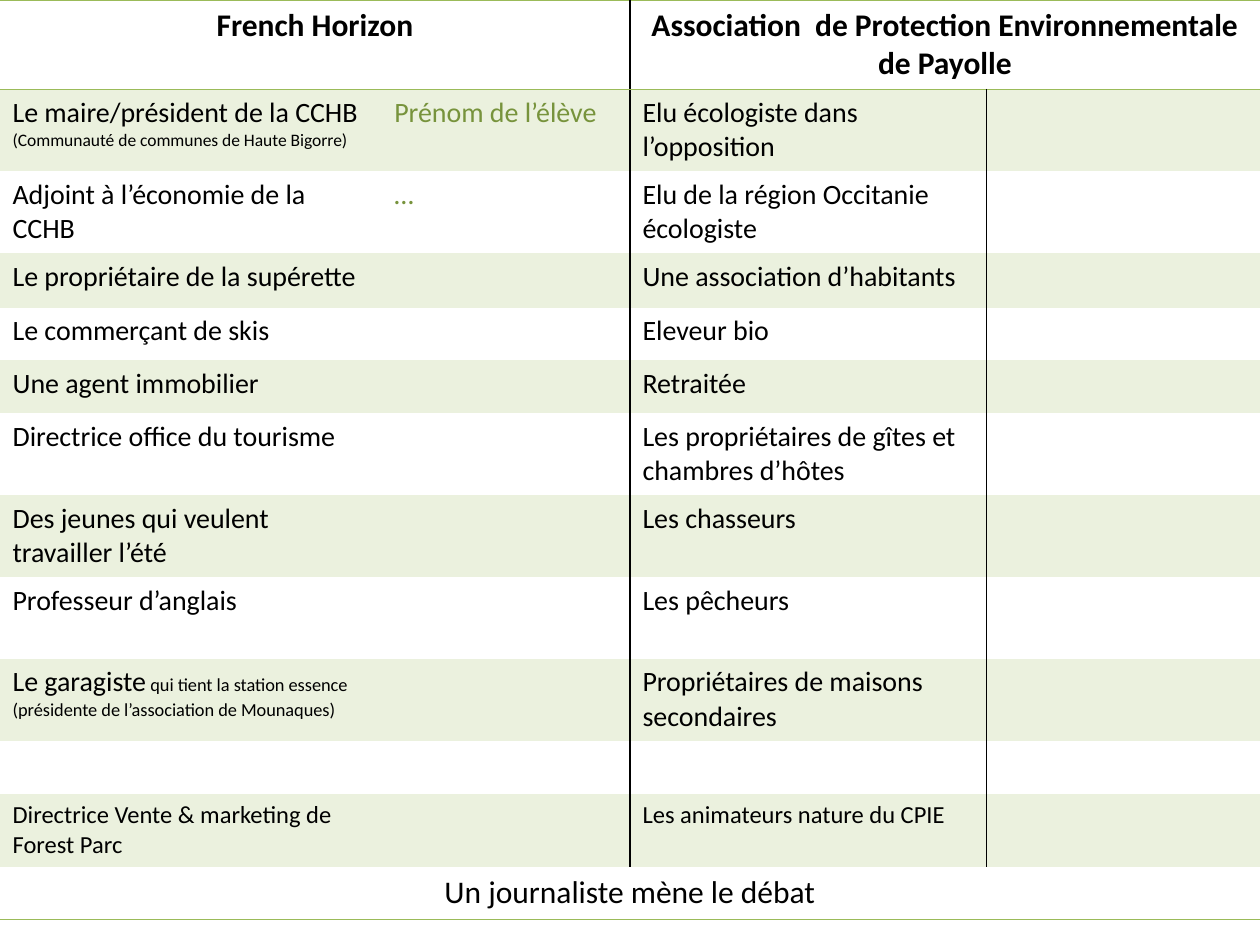
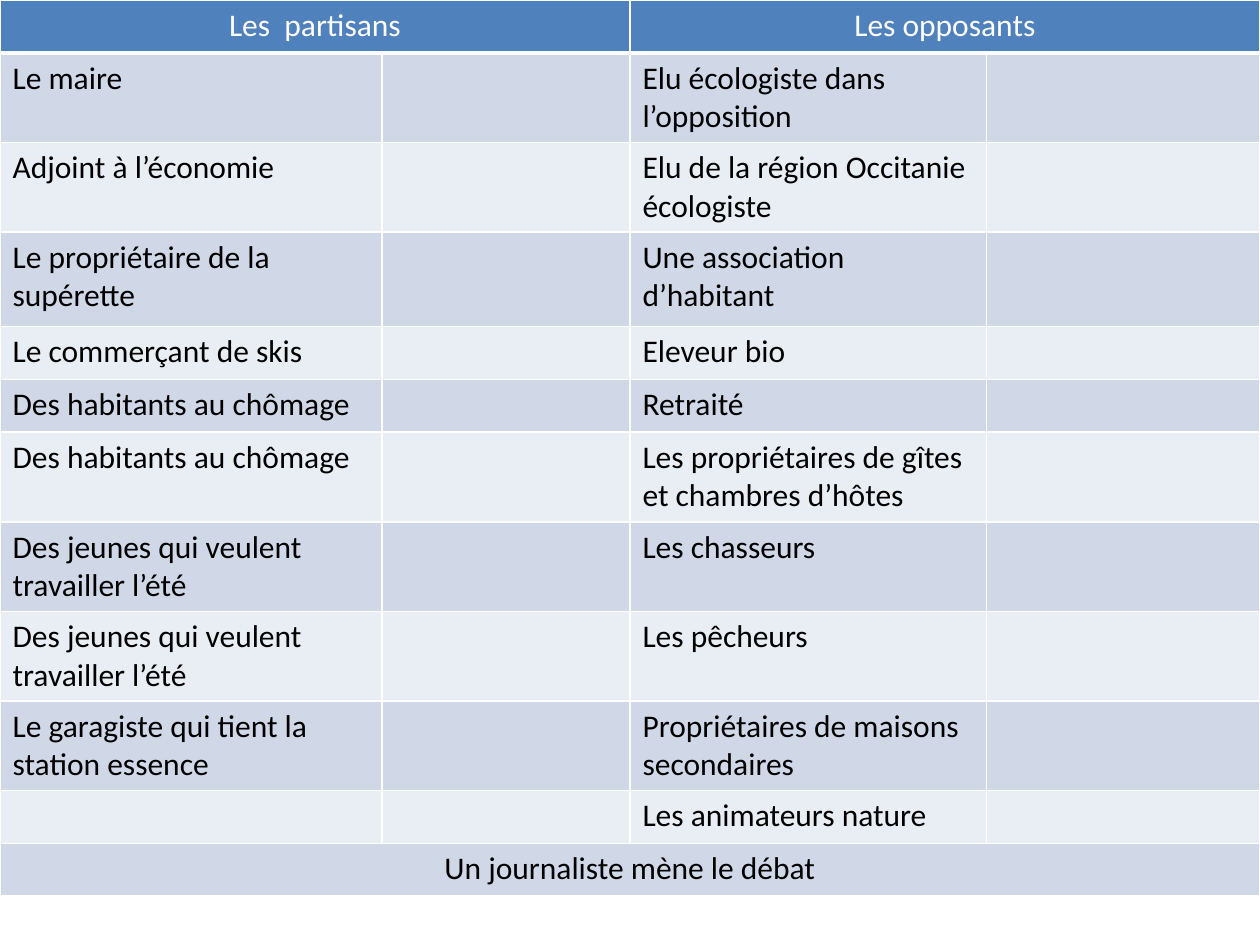
from dataclasses import dataclass
from lxml import etree
from pptx import Presentation
from pptx.dml.color import RGBColor
from pptx.enum import text
from pptx.oxml import ns
from pptx.util import Inches, Pt

GREEN, BLACK, WHITE = "9BBB59", "000000", "FFFFFF"
COLS = (3.03, 1.97, 2.83, 2.17)
LOW, HIGH = 0.42, 0.65
CLOSING = "Un journaliste mène le débat"


@dataclass
class Theme:
    head: str
    ink: str
    bands: tuple
    last: str
    body: int
    bold: bool
    font: str = "Calibri"
    title: int = 18
    name: str = "77933C"


OLIVE = Theme(WHITE, BLACK, ("EBF1DE", WHITE), WHITE, 16, True)
BLUE = Theme("4F81BD", WHITE, ("D0D8E8", "E9EDF4"), "D0D8E8", 18, False)

# Each row: height, supporter, pupil, opponent[, type size]
# A list holds (text, size) runs.
CAST = [
    (HIGH, [("Le maire/président de la CCHB ", 16),
            ("(Communauté de communes de Haute Bigorre)", 10)],
     "Prénom de l’élève", "Elu écologiste dans l’opposition"),
    (HIGH, "Adjoint à l’économie de la CCHB", "…", "Elu de la région Occitanie écologiste"),
    (0.43, "Le propriétaire de la supérette", "", "Une association d’habitants"),
    (LOW, "Le commerçant de skis", "", "Eleveur bio"),
    (LOW, "Une agent immobilier", "", "Retraitée"),
    (HIGH, "Directrice office du tourisme", "", "Les propriétaires de gîtes et chambres d’hôtes"),
    (HIGH, "Des jeunes qui veulent travailler l’été", "", "Les chasseurs"),
    (HIGH, "Professeur d’anglais", "", "Les pêcheurs"),
    (HIGH, [("Le garagiste", 16),
            (" qui tient la station essence (présidente de l’association de Mounaques)", 10.5)],
     "", "Propriétaires de maisons secondaires"),
    (LOW, "", "", ""),
    (0.58, "Directrice Vente & marketing de Forest Parc", "", "Les animateurs nature du CPIE", 14),
]
SIDES = [
    (HIGH, "Le maire", "", "Elu écologiste dans l’opposition"),
    (HIGH, "Adjoint à l’économie", "", "Elu de la région Occitanie écologiste"),
    (0.75, "Le propriétaire de la supérette", "", "Une association d’habitant"),
    (LOW, "Le commerçant de skis", "", "Eleveur bio"),
    (LOW, "Des habitants au chômage", "", "Retraité"),
    (HIGH, "Des habitants au chômage", "", "Les propriétaires de gîtes et chambres d’hôtes"),
    (HIGH, "Des jeunes qui veulent travailler l’été", "", "Les chasseurs"),
    (HIGH, "Des jeunes qui veulent travailler l’été", "", "Les pêcheurs"),
    (HIGH, "Le garagiste qui tient la station essence", "", "Propriétaires de maisons secondaires"),
    (LOW, "", "", "Les animateurs nature"),
]


def olive_edges(row, col, last):
    """Green rules around the head and foot, black rules between columns."""
    edges = {}
    if row == 0:
        edges.update(T=(GREEN, 1), B=(GREEN, 1))
    if row == 1:
        edges["T"] = (GREEN, 1)
    if row == last:
        edges["B"] = (GREEN, 1)
    else:
        ruled = (1,) if row == 0 else (1, 2)
        if col in ruled:
            edges["R"] = (BLACK, 1)
        if col - 1 in ruled:
            edges["L"] = (BLACK, 1)
    return edges


def blue_edges(row, col, last):
    edges = dict.fromkeys("LRTB", (WHITE, 1))
    if row == 0:
        edges["B"] = (WHITE, 3)
    return edges


def draw_edges(cell, edges):
    props = cell._tc.get_or_add_tcPr()
    for spot, side in enumerate("LRTB"):
        line = etree.Element(ns.qn(f"a:ln{side}"))
        if side in edges:
            color, width = edges[side]
            line.set("w", str(Pt(width)))
            fill = etree.SubElement(line, ns.qn("a:solidFill"))
            etree.SubElement(fill, ns.qn("a:srgbClr"), val=color)
        else:
            line.set("w", "0")
            etree.SubElement(line, ns.qn("a:noFill"))
        props.insert(spot, line)


def paint(cell, fill):
    cell.fill.solid()
    cell.fill.fore_color.rgb = RGBColor.from_string(fill)


def write(cell, words, theme, size, color=BLACK, bold=False, center=False):
    para = cell.text_frame.paragraphs[0]
    if center:
        para.alignment = text.PP_ALIGN.CENTER
    font = para.font
    font.name, font.size, font.bold = theme.font, Pt(size), bold
    font.color.rgb = RGBColor.from_string(color)
    if isinstance(words, str):
        if words:
            para.add_run().text = words
        return
    for part, points in words:
        run = para.add_run()
        run.text = part
        run.font.size = Pt(points)


def add_cast(deck, heads, head_high, rows, theme, edges):
    """Add a slide with one table of supporters facing opponents."""
    slide = deck.slides.add_slide(deck.slide_layouts[6])
    highs = [head_high, *(row[0] for row in rows), LOW]
    last = len(highs) - 1
    grid = slide.shapes.add_table(len(highs), len(COLS), 0, 0,
                                  Inches(sum(COLS)), Inches(sum(highs))).table
    grid.first_row = grid.horz_banding = False
    for col, width in zip(grid.columns, COLS):
        col.width = Inches(width)
    for row, high in enumerate(highs):
        grid.rows[row].height = Inches(high)
        band = theme.bands[(row - 1) % 2]
        fill = {0: theme.head, last: theme.last}.get(row, band)
        for col in range(len(COLS)):
            cell = grid.cell(row, col)
            paint(cell, fill)
            draw_edges(cell, edges(row, col, last))

    for col, head in zip((0, 2), heads):
        grid.cell(0, col).merge(grid.cell(0, col + 1))
        write(grid.cell(0, col), head, theme, theme.title, theme.ink, theme.bold, True)
    for row, (_, backer, pupil, rival, *size) in enumerate(rows, 1):
        points = size[0] if size else theme.body
        for col, words in enumerate((backer, pupil, rival, "")):
            write(grid.cell(row, col), words, theme, points,
                  theme.name if col == 1 else BLACK)
    grid.cell(last, 0).merge(grid.cell(last, 3))
    write(grid.cell(last, 0), CLOSING, theme, theme.title, center=True)


def main():
    deck = Presentation()
    deck.slide_width, deck.slide_height = Inches(10), Inches(7.5)
    add_cast(deck, ("French Horizon", "Association  de Protection Environnementale de Payolle"),
             0.71, CAST, OLIVE, olive_edges)
    add_cast(deck, ("Les  partisans", "Les opposants"), LOW, SIDES, BLUE, blue_edges)
    deck.save("out.pptx")


if __name__ == "__main__":
    main()
